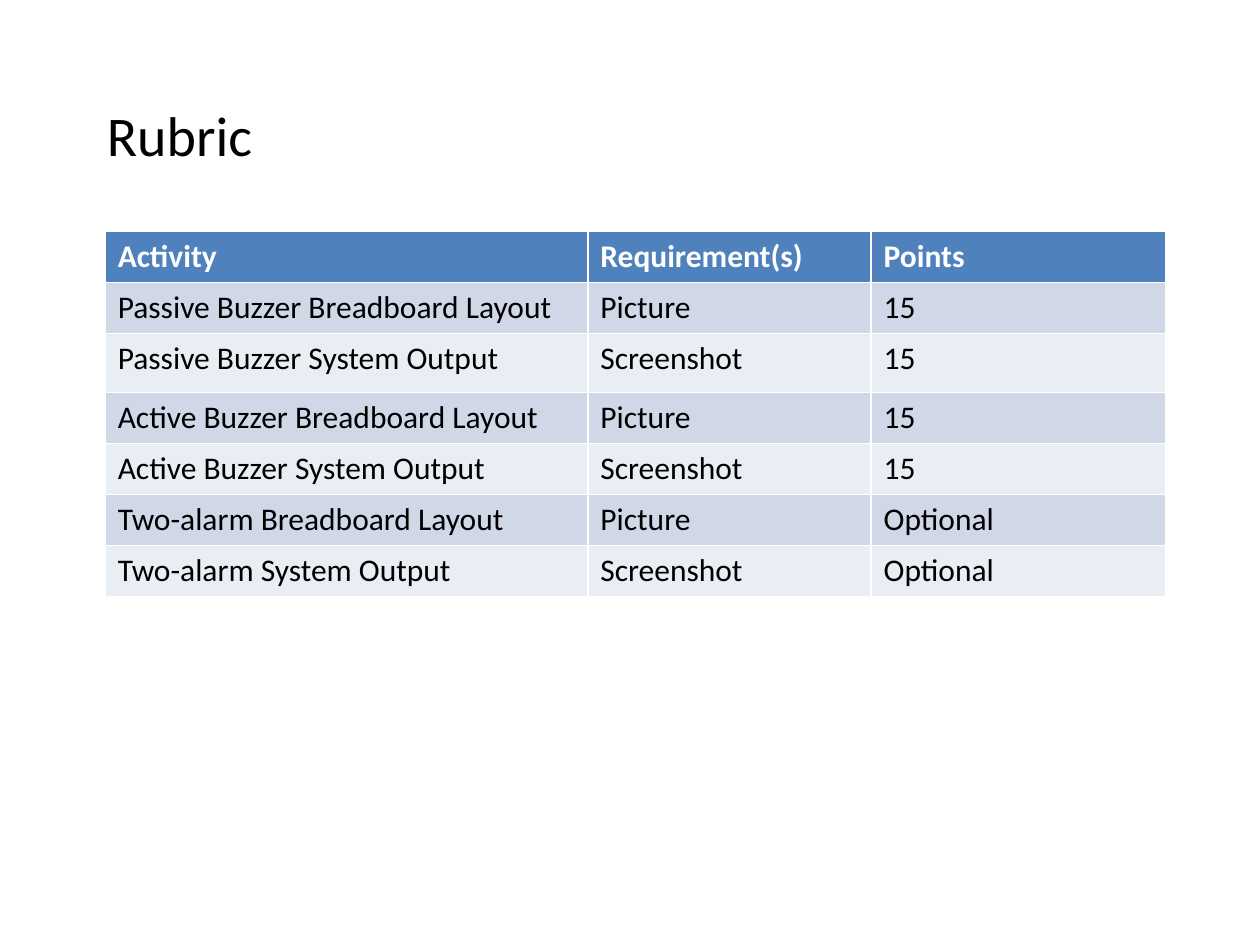
from lxml import etree
from pptx import Presentation
from pptx import util as u
from pptx.dml.color import RGBColor


def color(value):
    return RGBColor.from_string(value)


def format_text(paragraph, size, value, bold=False):
    settings = {"name": "Calibri", "size": u.Pt(size), "bold": bold}
    for name, setting in settings.items():
        setattr(paragraph.font, name, setting)
    paragraph.font.color.rgb = color(value)


presentation = Presentation()
presentation.slide_width = u.Cm(25.4)
presentation.slide_height = u.Cm(19.05)
slide = presentation.slides.add_slide(presentation.slide_layouts[1])

# Heading in the body placeholder, without a bullet
title, body = slide.placeholders
title.element.getparent().remove(title.element)
position = {"left": 1.9, "top": 1.9, "width": 22.86, "height": 12.57}
for name, length in position.items():
    setattr(body, name, u.Cm(length))
body.text_frame.text = "Rubric"
heading = body.text_frame.paragraphs[0]
format_text(heading, 32, "000000")
properties = heading._p.get_or_add_pPr()
namespace = properties.nsmap["a"]
etree.SubElement(properties, f"{{{namespace}}}buNone")

# Rubric table
rows = [
    ("Activity", "Requirement(s)", "Points"),
    ("Passive Buzzer Breadboard Layout", "Picture", "15"),
    ("Passive Buzzer System Output", "Screenshot", "15"),
    ("Active Buzzer Breadboard Layout", "Picture", "15"),
    ("Active Buzzer System Output", "Screenshot", "15"),
    ("Two-alarm Breadboard Layout", "Picture", "Optional"),
    ("Two-alarm System Output", "Screenshot", "Optional"),
]
column_widths = [9.73, 5.71, 5.93]
row_heights = [1.03, 1.03, 1.19, 1.03, 1.03, 1.03, 1.03]
table = slide.shapes.add_table(
    len(rows), len(column_widths), u.Cm(2.12), u.Cm(4.66),
    u.Cm(sum(column_widths)), u.Cm(sum(row_heights))).table
for column, width in zip(table.columns, column_widths):
    column.width = u.Cm(width)

# Header and alternating row bands
for index, values in enumerate(rows):
    table.rows[index].height = u.Cm(row_heights[index])
    header = index == 0
    fill = "4F81BD" if header else ("E9EDF4", "D0D8E8")[index % 2]
    for cell, value in zip(table.rows[index].cells, values):
        cell.text = value
        cell.fill.solid()
        cell.fill.fore_color.rgb = color(fill)
        format_text(cell.text_frame.paragraphs[0], 18,
                    "FFFFFF" if header else "000000", header)

presentation.save("out.pptx")
